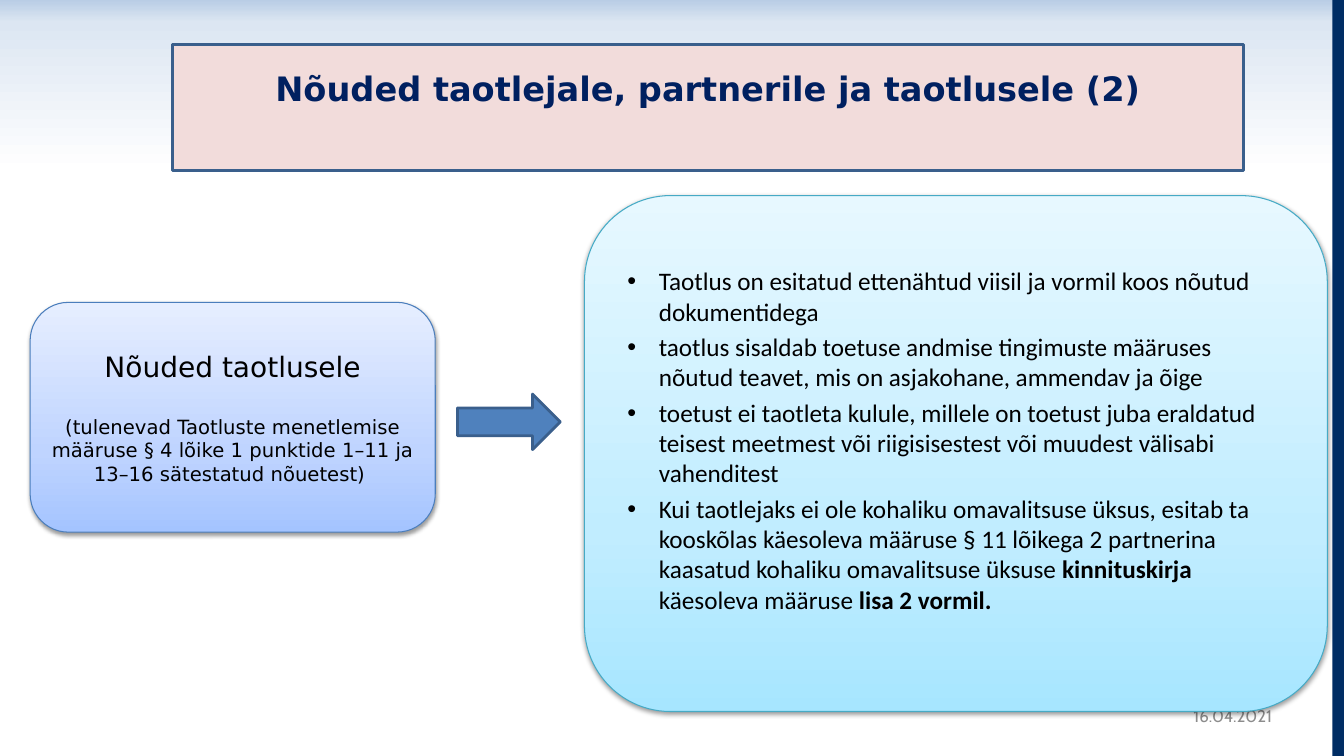
from copy import deepcopy
from lxml import etree
from pptx import Presentation
from pptx.dml.color import RGBColor
from pptx.enum import shapes, text
from pptx.oxml import ns
from pptx.util import Cm, Pt

NAVY = RGBColor(0x00, 0x20, 0x60)
STRIP = RGBColor(0x00, 0x2D, 0x64)
PINK = RGBColor(0xF2, 0xDC, 0xDB)
BLUE = RGBColor(0x4F, 0x81, 0xBD)
EDGE = RGBColor(0x3A, 0x5F, 0x8C)
RIM = RGBColor(0x4B, 0x7E, 0xBC)
TEAL = RGBColor(0x46, 0xAA, 0xC5)
GREY = RGBColor(0x8C, 0x8C, 0x8C)
BLACK = RGBColor(0, 0, 0)
# Gradient stops: position and colour
SKY = [(0, RGBColor(0xB9, 0xCD, 0xE5)), (0.13, RGBColor(0xDC, 0xE6, 0xF2)),
       (1, RGBColor(0xFF, 0xFF, 0xFF))]
LILAC = [(0, RGBColor(0xA4, 0xC4, 0xFF)), (0.35, RGBColor(0xBF, 0xD4, 0xFF)),
         (1, RGBColor(0xE6, 0xEE, 0xFF))]
AQUA = [(0, RGBColor(0xA7, 0xE6, 0xFF)), (0.35, RGBColor(0xC1, 0xED, 0xFF)),
        (1, RGBColor(0xE7, 0xF8, 0xFF))]

KIND = shapes.MSO_SHAPE
ALIGN = text.PP_ALIGN

RULES = [
    [("Taotlus on esitatud ettenähtud viisil ja vormil koos nõutud "
      "dokumentidega", False)],
    [("taotlus sisaldab toetuse andmise tingimuste määruses nõutud teavet, "
      "mis on asjakohane, ammendav ja õige", False)],
    [("toetust ei taotleta kulule, millele on toetust juba eraldatud teisest "
      "meetmest või riigisisestest või muudest välisabi vahenditest", False)],
    [("Kui taotlejaks ei ole kohaliku omavalitsuse üksus, esitab ta kooskõlas "
      "käesoleva määruse § 11 lõikega 2 partnerina kaasatud kohaliku "
      "omavalitsuse üksuse ", False),
     ("kinnituskirja ", True), ("käesoleva määruse ", False),
     ("lisa 2 vormil.", True)],
]


def child(node, tag, **attrs):
    return etree.SubElement(node, ns.qn(tag), attrs)


def shade(fill, stops, angle):
    fill.gradient()
    first = fill._xPr.find(".//" + ns.qn("a:gs"))
    first.addnext(deepcopy(first))
    for stop, (pos, tone) in zip(fill.gradient_stops, stops):
        stop.position = pos
        stop.color.rgb = tone
    fill.gradient_angle = angle


def draw(slide, kind, box, fill, line=None, width=0.75, angle=90):
    item = slide.shapes.add_shape(kind, *map(Cm, box))
    item.shadow.inherit = False
    if isinstance(fill, list):
        shade(item.fill, fill, angle)
    else:
        item.fill.solid()
        item.fill.fore_color.rgb = fill
    if line is None:
        item.line.fill.background()
    else:
        item.line.color.rgb = line
        item.line.width = Pt(width)
    return item


def cast(item):
    """Give the item a soft shadow below."""
    glow = item._element.spPr.find(ns.qn("a:effectLst"))
    drop = child(glow, "a:outerShdw", blurRad=str(Pt(3.1)), dist=str(Pt(1.6)),
                 dir="5400000", rotWithShape="0")
    tone = child(drop, "a:srgbClr", val="000000")
    child(tone, "a:alpha", val="38000")


def frame(item, inset=None, foot=None):
    body = item.text_frame
    body.word_wrap = True
    body.vertical_anchor = text.MSO_ANCHOR.MIDDLE
    if inset is not None:
        body.margin_left = body.margin_right = Cm(inset)
        body.margin_top = body.margin_bottom = Cm(inset)
    if foot is not None:
        body.margin_bottom = Cm(foot)
    return body


def write(para, words, size, face, tone, bold=False):
    run = para.add_run()
    run.text = words
    run.font.size = Pt(size)
    run.font.name = face
    run.font.color.rgb = tone
    run.font.bold = bold


def back(slide, box):
    x, y, w, h = box
    draw(slide, KIND.RECTANGLE, (x, y, w, 4.32), SKY, angle=270)
    draw(slide, KIND.RECTANGLE, (x + w - 0.29, y, 0.29, h), STRIP)
    # Date in the lower right corner
    date = slide.shapes.add_textbox(
        *map(Cm, (x + w - 5.19, y + h - 1.52, 3.63, 1.02)))
    para = frame(date).paragraphs[0]
    para.alignment = ALIGN.RIGHT
    write(para, "16.04.2021", 12, "Cabin", GREY)


def title(slide, box):
    item = draw(slide, KIND.RECTANGLE, box, PINK, EDGE, 2)
    para = frame(item, 0, 0.99).paragraphs[0]
    para.alignment = ALIGN.CENTER
    write(para, "Nõuded taotlejale, partnerile ja taotlusele (2)", 24,
          "DejaVu Sans", NAVY, True)


def topic(slide, box):
    item = draw(slide, KIND.ROUNDED_RECTANGLE, box, LILAC, RIM)
    cast(item)
    body = frame(item, 0)
    head, note = body.paragraphs[0], body.add_paragraph()
    head.alignment = note.alignment = ALIGN.CENTER
    note.space_before = Pt(23)
    write(head, "Nõuded taotlusele", 20, "DejaVu Sans", BLACK)
    write(note, "(tulenevad Taotluste menetlemise määruse § 4 lõike 1 "
          "punktide 1–11 ja 13–16 sätestatud nõuetest) ", 14,
          "DejaVu Sans", BLACK)


def rules(slide, box):
    item = draw(slide, KIND.ROUNDED_RECTANGLE, box, AQUA, TEAL)
    cast(item)
    body = frame(item, foot=0.81)
    for i, parts in enumerate(RULES):
        para = body.add_paragraph() if i else body.paragraphs[0]
        para.alignment = ALIGN.LEFT
        if i:
            para.space_before = Pt(3.8)
        props = para._p.get_or_add_pPr()
        props.set("marL", str(Cm(0.99)))
        props.set("indent", str(-Cm(0.79)))
        child(props, "a:buFont", typeface="Arial")
        child(props, "a:buChar", char="•")
        for words, bold in parts:
            write(para, words, 18, "Calibri", BLACK, bold)


def main():
    deck = Presentation()
    deck.slide_width, deck.slide_height = Cm(33.87), Cm(19.05)
    slide = deck.slides.add_slide(deck.slide_layouts[6])
    back(slide, (0, 0, 33.87, 19.05))
    title(slide, (4.34, 1.12, 27, 3.18))
    topic(slide, (0.76, 7.62, 10.21, 5.79))
    rules(slide, (14.73, 4.93, 18.72, 13))
    # Arrow from the topic to its rules
    draw(slide, KIND.RIGHT_ARROW, (11.53, 9.93, 2.59, 1.4), BLUE, EDGE, 2)
    deck.save("out.pptx")


if __name__ == "__main__":
    main()
